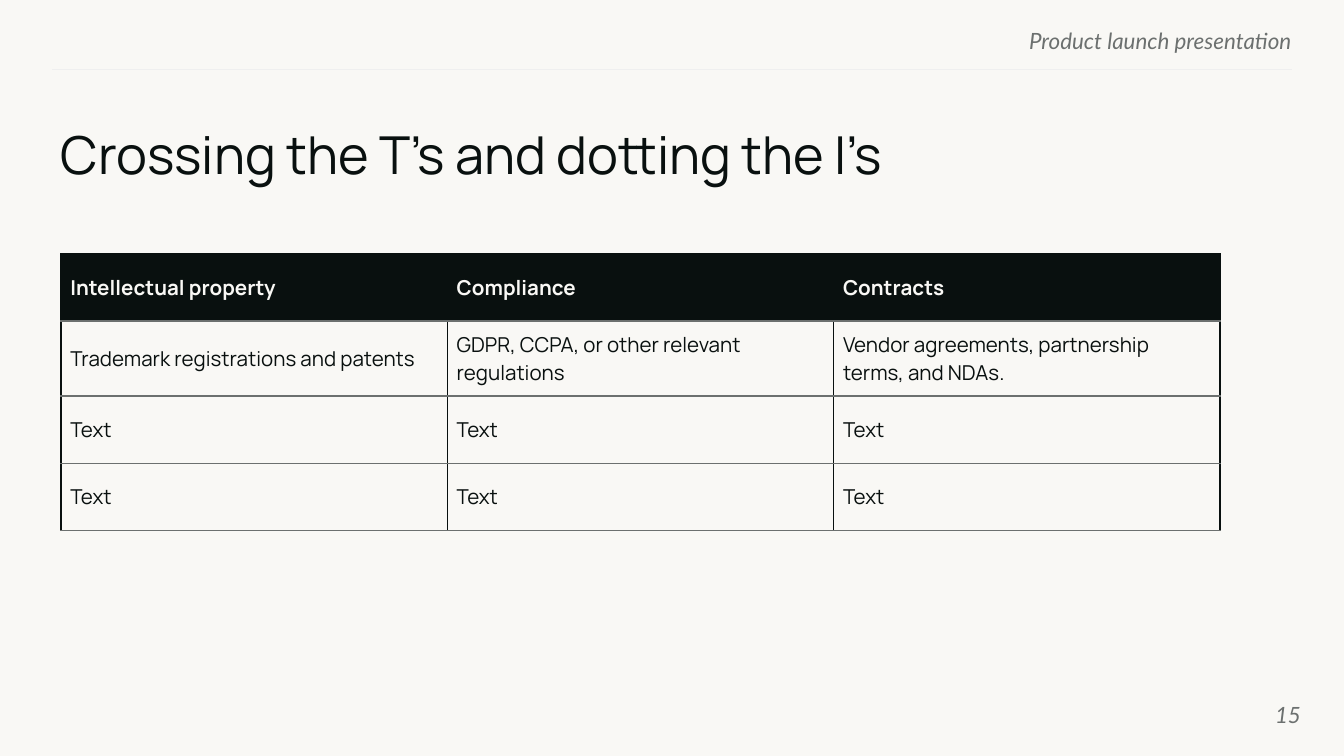
from lxml.etree import SubElement
from pptx import Presentation
from pptx.dml.color import RGBColor
from pptx.enum.shapes import MSO_CONNECTOR
from pptx.enum.text import MSO_ANCHOR, PP_ALIGN
from pptx.oxml.ns import qn
from pptx.util import Inches, Pt

INK = RGBColor(0x09, 0x10, 0x0F)
GRAY = RGBColor(0x6C, 0x70, 0x6F)
PAPER = RGBColor(0xF9, 0xF8, 0xF5)
RULE = RGBColor(0xEF, 0xEF, 0xEF)

GRID_COLUMNS = 100
GRID_ROWS = 56.25

TABLE_ROWS = [
    ["Intellectual property", "Compliance", "Contracts"],
    [
        "Trademark registrations and patents",
        "GDPR, CCPA, or other relevant regulations",
        "Vendor agreements, partnership terms, and NDAs.",
    ],
    ["Text"] * 3,
    ["Text"] * 3,
]
ROW_HEIGHTS = [5, 5.58, 5, 5]


def write_text(container, text, size=11, font="Manrope", color=INK, bold=False,
               italic=False, align=PP_ALIGN.LEFT, anchor=MSO_ANCHOR.TOP, inset=0):
    container.vertical_anchor = anchor
    container.margin_left = container.margin_right = Inches(inset)
    container.margin_top = container.margin_bottom = Inches(inset)
    frame = getattr(container, "text_frame", container)
    paragraph = frame.paragraphs[0]
    paragraph.alignment = align
    run = paragraph.add_run()
    run.text = text
    run.font.size = Pt(size)
    run.font.name = font
    run.font.color.rgb = color
    run.font.bold = bold
    run.font.italic = italic


class SlideBuilder:
    note_style = dict(size=12, font="Lato", color=GRAY, italic=True, align=PP_ALIGN.RIGHT)
    title_style = dict(size=28)
    cell_style = dict(anchor=MSO_ANCHOR.MIDDLE, inset=0.07)

    def __init__(self, presentation):
        self.column = presentation.slide_width / GRID_COLUMNS
        self.row = presentation.slide_height / GRID_ROWS
        self.slide = presentation.slides.add_slide(presentation.slide_layouts[6])
        background = self.slide.background.fill
        background.solid()
        background.fore_color.rgb = PAPER

    def place(self, left, top, width, height):
        return (round(left * self.column), round(top * self.row),
                round(width * self.column), round(height * self.row))

    def text(self, text, left, top, width, height, **style):
        shape = self.slide.shapes.add_textbox(*self.place(left, top, width, height))
        shape.text_frame.word_wrap = True
        write_text(shape.text_frame, text, **style)

    def line(self, left, top, width):
        x, y, length, _ = self.place(left, top, width, 0)
        connector = self.slide.shapes.add_connector(
            MSO_CONNECTOR.STRAIGHT, x + length, y, x, y)
        connector.line.color.rgb = RULE
        connector.line.width = Pt(0.75)
        SubElement(connector._element.spPr, qn("a:effectLst"))

    def border(self, cell, side, color, width):
        properties = cell._tc.get_or_add_tcPr()
        line = SubElement(properties, qn(f"a:ln{side}"), w=str(Pt(width)))
        fill = SubElement(line, qn("a:solidFill"))
        SubElement(fill, qn("a:srgbClr"), val=str(color))

    def cell(self, cell, text, header):
        top_border = (INK, 0.75) if header else (GRAY, 1)
        self.border(cell, "L", INK, 0.75)
        self.border(cell, "R", INK, 0.75)
        self.border(cell, "T", *top_border)
        self.border(cell, "B", GRAY, 1)
        if header:
            cell.fill.solid()
            cell.fill.fore_color.rgb = INK
        else:
            cell.fill.background()
        write_text(cell, text, color=PAPER if header else INK, bold=header,
                   **self.cell_style)

    def table(self, rows, left, top, column_width, row_heights):
        frame = self.slide.shapes.add_table(
            len(rows), len(rows[0]),
            *self.place(left, top, column_width * len(rows[0]), sum(row_heights)))
        table = frame.table
        table.horz_banding = False
        for row_index, row in enumerate(rows):
            table.rows[row_index].height = round(row_heights[row_index] * self.row)
            for column_index, text in enumerate(row):
                self.cell(table.cell(row_index, column_index), text, row_index == 0)


def main():
    presentation = Presentation()
    presentation.slide_width = Inches(10)
    presentation.slide_height = Inches(5.625)
    builder = SlideBuilder(presentation)
    builder.text("Product launch presentation", 57.6, 2, 38.5, 1.8, **builder.note_style)
    builder.line(3.9, 5.16, 92.2)
    builder.text("Crossing the T’s and dotting the I’s", 4.53, 9.1, 92.3, 5.1,
                 **builder.title_style)
    builder.text("15", 90.8, 51, 6, 4.3, anchor=MSO_ANCHOR.MIDDLE, **builder.note_style)
    builder.table(TABLE_ROWS, 4.53, 18.9, 28.75, ROW_HEIGHTS)
    presentation.save("out.pptx")


if __name__ == "__main__":
    main()
